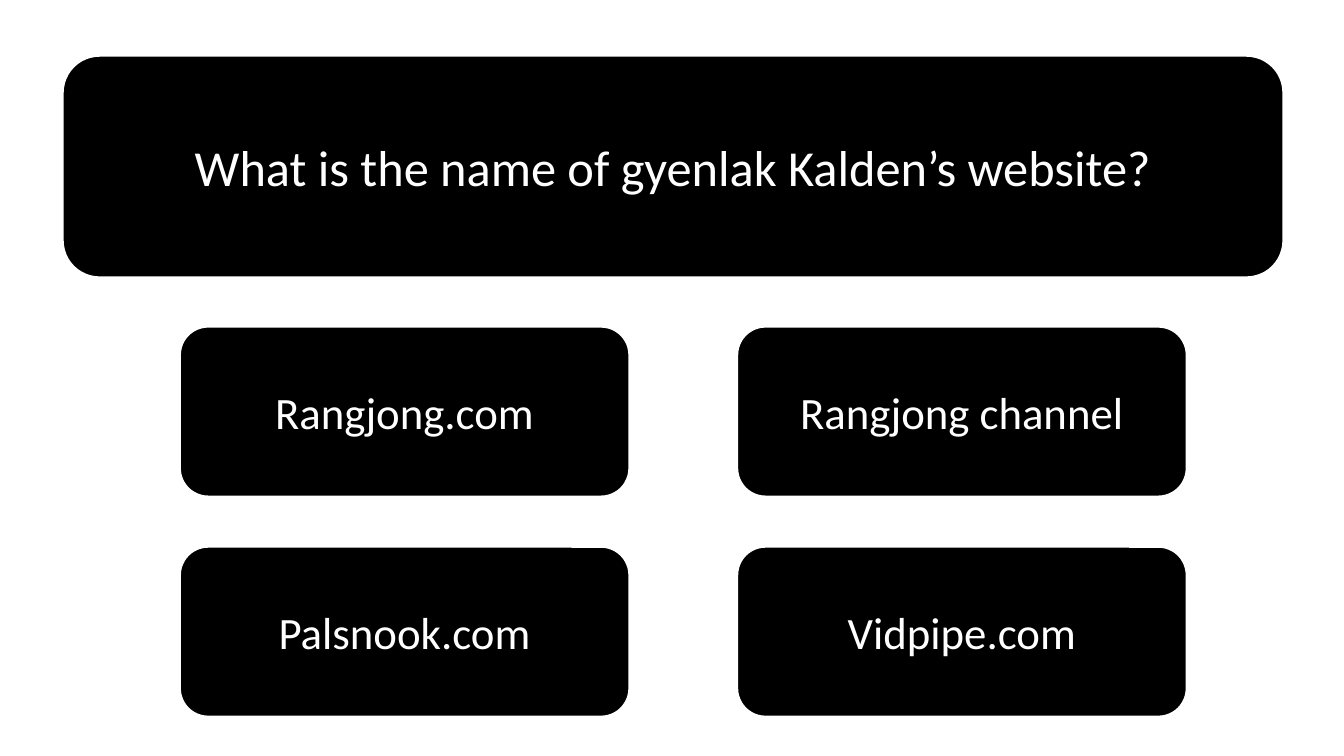
from pptx import Presentation
from pptx.dml.color import RGBColor
from pptx.enum.shapes import MSO_SHAPE as Shape
from pptx.enum.text import MSO_ANCHOR as Anchor, PP_ALIGN as Align
from pptx.util import Pt

# Content
QUESTION = "What is the name of gyenlak Kalden’s website?"
ANSWERS = [
    ["Rangjong.com", "Rangjong channel"],
    ["Palsnook.com", "Vidpipe.com"],
]

# Format, lengths in points
BLACK = RGBColor(0x00, 0x00, 0x00)
WHITE = RGBColor(0xFF, 0xFF, 0xFF)
SLIDE_WIDTH, SLIDE_HEIGHT = 960, 540
QUESTION_BOX = (44.8, 39.8, 872, 158.4)
QUESTION_FONT = {"name": "Calibri", "size": Pt(36)}
ANSWER_FONT = {"name": "Calibri", "size": Pt(32)}
GRID_LEFT, GRID_TOP = 128.5, 233.3
ANSWER_WIDTH, ANSWER_HEIGHT = 321.1, 121.4
COLUMN_GAP, ROW_GAP = 77, 35.8


def add_card(slide, text, box, font_format):
    """Add a black rounded card with centred white text."""
    card = slide.shapes.add_shape(Shape.ROUNDED_RECTANGLE, *map(Pt, box))
    card.shadow.inherit = False
    card.fill.solid()
    card.fill.fore_color.rgb = BLACK
    card.line.color.rgb = WHITE
    card.line.width = Pt(1.5)
    frame = card.text_frame
    frame.word_wrap = True
    frame.vertical_anchor = Anchor.MIDDLE
    paragraph = frame.paragraphs[0]
    paragraph.alignment = Align.CENTER
    run = paragraph.add_run()
    run.text = text
    run.font.color.rgb = WHITE
    for attribute, value in font_format.items():
        setattr(run.font, attribute, value)


def main():
    quiz = Presentation()
    quiz.slide_width, quiz.slide_height = Pt(SLIDE_WIDTH), Pt(SLIDE_HEIGHT)
    slide = quiz.slides.add_slide(quiz.slide_layouts[6])

    # Question
    add_card(slide, QUESTION, QUESTION_BOX, QUESTION_FONT)

    # Answer grid
    for row, answers in enumerate(ANSWERS):
        for column, answer in enumerate(answers):
            left = GRID_LEFT + column * (ANSWER_WIDTH + COLUMN_GAP)
            top = GRID_TOP + row * (ANSWER_HEIGHT + ROW_GAP)
            add_card(slide, answer, (left, top, ANSWER_WIDTH, ANSWER_HEIGHT), ANSWER_FONT)

    quiz.save("out.pptx")


if __name__ == "__main__":
    main()
